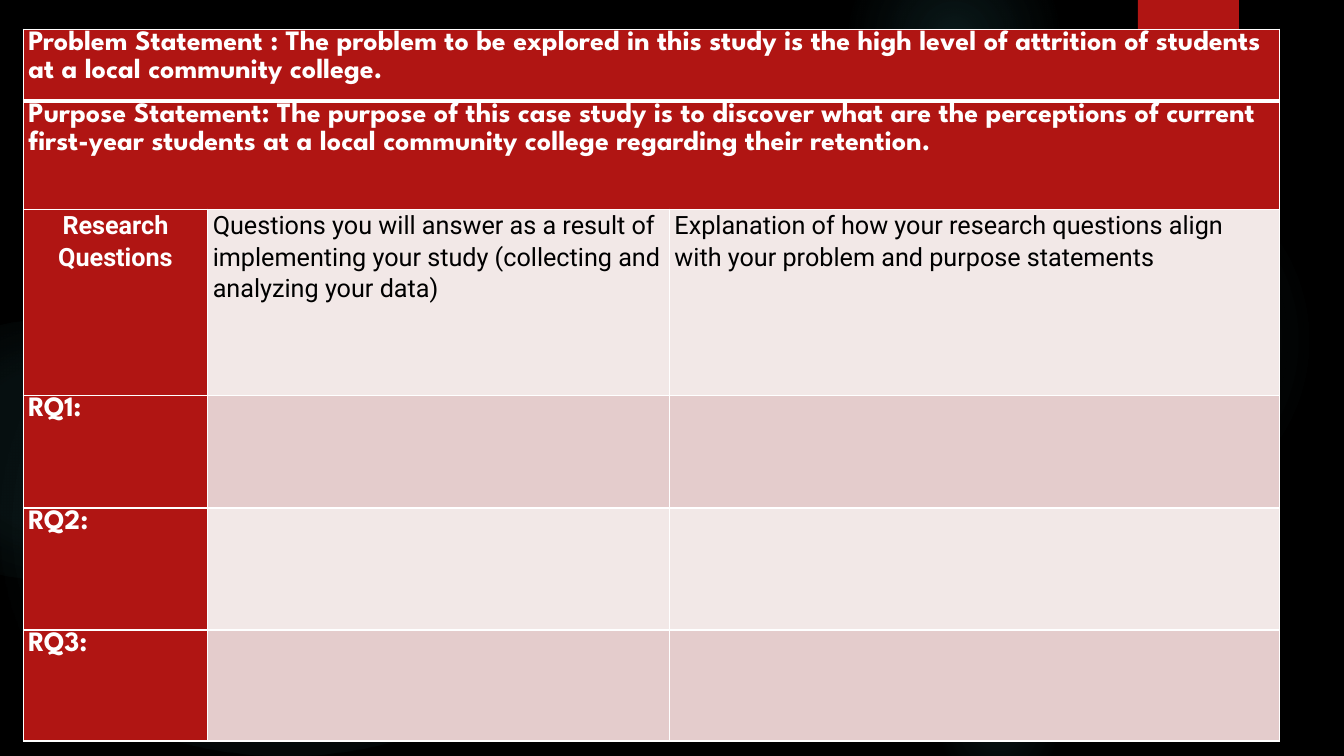
from lxml import etree
from pptx import Presentation
from pptx import util as u
from pptx.dml.color import RGBColor
from pptx.enum import shapes, text
from pptx.oxml import parse_xml
from pptx.oxml.ns import nsdecls, qn

COLORS = {"back": "000000", "red": "B01513", "glow": "50B9C1", "white": "FFFFFF",
          "ink": "000000", "light": "F2E8E7", "dark": "E4CCCC"}
HEADING = dict(font="League Spartan", size=20, color="white", bold=True)
LABEL = dict(font="Roboto", size=18, color="white", bold=True,
             align=text.PP_ALIGN.CENTER)
BODY = dict(font="Roboto", size=18, color="ink", bold=False)


def rgb(name):
    return RGBColor.from_string(COLORS[name])


def write(frame, words, font, size, color, bold, align=None):
    paragraph = frame.paragraphs[0]
    paragraph.alignment = align
    paragraph.line_spacing = 1.07
    run = paragraph.add_run()
    run.text = words
    run.font.name, run.font.size, run.font.bold = font, u.Pt(size), bold
    run.font.color.rgb = rgb(color)


class Deck:
    def __init__(self, width, height):
        self.prs = Presentation()
        self.prs.slide_width, self.prs.slide_height = u.Pt(width), u.Pt(height)
        self.slide = self.prs.slides.add_slide(self.prs.slide_layouts[6])
        self.slide.background.fill.solid()
        self.slide.background.fill.fore_color.rgb = rgb("back")

    def shape(self, kind, box):
        shape = self.slide.shapes.add_shape(kind, *map(u.Pt, box))
        shape.shadow.inherit = False
        shape.line.fill.background()
        return shape

    def glow(self, box, stops):
        """Draw an ellipse that fades outwards; stops are (position, opacity) in percent."""
        ellipse = self.shape(shapes.MSO_SHAPE.OVAL, box)
        marks = "".join(
            f'<a:gs pos="{place * 1000}"><a:srgbClr val="{COLORS["glow"]}">'
            f'<a:alpha val="{opacity * 1000}"/></a:srgbClr></a:gs>'
            for place, opacity in stops)
        fade = parse_xml(
            f'<a:gradFill {nsdecls("a")} rotWithShape="1"><a:gsLst>{marks}</a:gsLst>'
            '<a:path path="circle"><a:fillToRect l="50000" t="50000" r="50000" b="50000"/>'
            '</a:path></a:gradFill>')
        ellipse._element.spPr.find(qn("a:prstGeom")).addnext(fade)

    def tab(self, box):
        """Draw the red page tab with its soft shadow."""
        tab = self.shape(shapes.MSO_SHAPE.RECTANGLE, box)
        tab.fill.solid()
        tab.fill.fore_color.rgb = rgb("red")
        tab._element.spPr.find(qn("a:effectLst")).append(parse_xml(
            f'<a:outerShdw {nsdecls("a")} blurRad="{u.Pt(3)}" dist="{u.Pt(2)}" dir="5400000" '
            'rotWithShape="0"><a:srgbClr val="000000"><a:alpha val="45000"/></a:srgbClr>'
            '</a:outerShdw>'))

    def table(self, left, top, widths, heights):
        box = (left, top, sum(widths), sum(heights))
        table = self.slide.shapes.add_table(
            len(heights), len(widths), *map(u.Pt, box)).table
        table.first_row = table.horz_banding = False
        for column, width in zip(table.columns, widths):
            column.width = u.Pt(width)
        for row, height in zip(table.rows, heights):
            row.height = u.Pt(height)
        return table

    def cell(self, cell, fill, top=1, bottom=1):
        """Fill a cell and give it white borders."""
        cell.margin_left = cell.margin_right = u.Pt(3.6)
        cell.margin_top = cell.margin_bottom = 0
        props = cell._tc.get_or_add_tcPr()
        for side, weight in zip("LRTB", (1, 1, top, bottom)):
            line = etree.SubElement(props, qn(f"a:ln{side}"), w=str(u.Pt(weight)))
            solid = etree.SubElement(line, qn("a:solidFill"))
            etree.SubElement(solid, qn("a:srgbClr"), val=COLORS["white"])
        cell.fill.solid()
        cell.fill.fore_color.rgb = rgb(fill)


def main():
    deck = Deck(960, 540)
    glows = [
        ((661.7, 131.8, 295.9, 221.8), [(0, 7), (36, 6), (69, 0)]),
        ((597.6, -36, 167.8, 126), [(0, 14), (36, 7), (73, 0)]),
        ((661.7, 480.2, 103.7, 77.8), [(0, 9), (36, 5), (66, 0)]),
        ((-15.8, 210.2, 439.9, 329.8), [(0, 11), (36, 10), (75, 0)]),
        ((-87.8, 228.2, 247.7, 185.8), [(0, 8), (36, 8), (72, 0)]),
    ]
    for box, stops in glows:
        deck.glow(box, stops)
    deck.tab((812.9, 0, 72, 86.4))

    statements = [
        "Problem Statement : The problem to be explored in this study is the high level "
        "of attrition of students at a local community college.",
        "Purpose Statement: The purpose of this case study is to discover what are the "
        "perceptions of current first-year students at a local community college "
        "regarding their retention.",
    ]
    questions = [
        "Research Questions",
        "Questions you will answer as a result of implementing your study "
        "(collecting and analyzing your data)",
        "Explanation of how your research questions align with your problem and "
        "purpose statements",
    ]
    plan = deck.table(16.6, 20.9, [131.8, 329.8, 435.6],
                      [51.4, 77.1, 132.9, 80.7, 87.1, 79.3])
    for row in range(6):
        band = "dark" if row % 2 else "light"
        for col in range(3):
            fill = "red" if row < 2 or col == 0 else band
            deck.cell(plan.cell(row, col), fill,
                      top=3 if row == 1 else 1, bottom=3 if row == 0 else 1)
    for row, statement in enumerate(statements):
        plan.cell(row, 0).merge(plan.cell(row, 2))
        write(plan.cell(row, 0).text_frame, statement, **HEADING)
    for col, question in enumerate(questions):
        write(plan.cell(2, col).text_frame, question, **(BODY if col else LABEL))
    for number in range(1, 4):
        write(plan.cell(number + 2, 0).text_frame, f"RQ{number}:", **HEADING)
    deck.prs.save("out.pptx")


if __name__ == "__main__":
    main()
